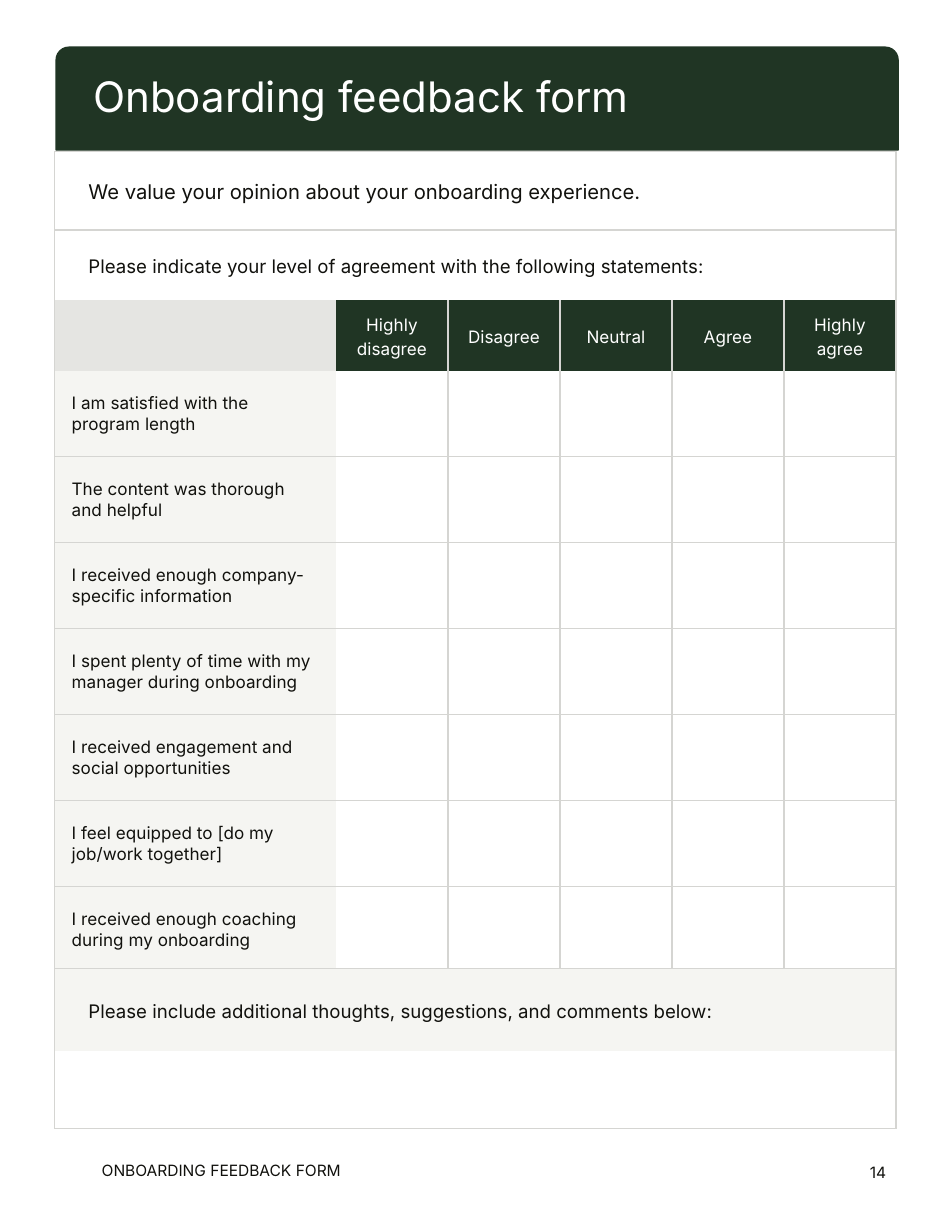
from lxml.etree import SubElement as Sub
from pptx import Presentation
from pptx.dml.color import RGBColor as Color
from pptx.enum.shapes import MSO_SHAPE as Kind
from pptx.enum.text import MSO_ANCHOR as Anchor, PP_ALIGN as Align
from pptx.oxml.ns import qn
from pptx.util import Inches, Pt

GREEN, INK, WHITE = "203524", "11110D", "FFFFFF"
RULE, PALE, GREY = "D5D5D2", "F5F5F2", "E5E5E2"
LEFT, WIDTH = 0.49, 7.51

TITLE = "Onboarding feedback form"
INTRO = "We value your opinion about your onboarding experience."
PROMPT = "Please indicate your level of agreement with the following statements:"
SCALE = ["Highly disagree", "Disagree", "Neutral", "Agree", "Highly agree"]
ITEMS = [
    "I am satisfied with the program length",
    "The content was thorough\nand helpful",
    "I received enough company-specific information",
    "I spent plenty of time with my manager during onboarding",
    "I received engagement and social opportunities",
    "I feel equipped to [do my job/work together]",
    "I received enough coaching during my onboarding",
]
NOTE = "Please include additional thoughts, suggestions, and comments below:"
FOOTER, PAGE = "ONBOARDING FEEDBACK FORM", "14"


def paint(fill, color):
    fill.solid()
    fill.fore_color.rgb = Color.from_string(color)


def write(frame, text, size=11, color=INK, align=Align.LEFT, space=None):
    frame.word_wrap = True
    frame.text = text
    for para in frame.paragraphs:
        para.alignment = align
        if space:
            para.line_spacing = space
        para.font.size = Pt(size)
        para.font.name = "Inter"
        para.font.color.rgb = Color.from_string(color)


def inset(part, left, top, right, bottom):
    part.margin_left, part.margin_top = Inches(left), Inches(top)
    part.margin_right, part.margin_bottom = Inches(right), Inches(bottom)


def add_box(shapes, kind, place, line, fill=None):
    box = shapes.add_shape(kind, *map(Inches, place))
    box.shadow.inherit = False
    box.line.width = Pt(0.75)
    paint(box.line.fill, line)
    if fill:
        paint(box.fill, fill)
    else:
        box.fill.background()
    box.text_frame.vertical_anchor = Anchor.MIDDLE
    return box


def add_label(shapes, text, place, anchor, align):
    frame = shapes.add_textbox(*map(Inches, place)).text_frame
    inset(frame, 0.1, 0.1, 0.1, 0.1)
    frame.vertical_anchor = anchor
    write(frame, text, size=10, align=align)


def add_grid(shapes, top, cols, rows):
    place = LEFT, top, sum(cols), sum(rows)
    grid = shapes.add_table(len(rows), len(cols), *map(Inches, place)).table
    grid.first_row = grid.horz_banding = False
    for col, width in zip(grid.columns, cols):
        col.width = Inches(width)
    for row, height in zip(grid.rows, rows):
        row.height = Inches(height)
    return grid


def style(cell, sides, fill=None):
    props = cell._tc.get_or_add_tcPr()
    for side in "LRTB":
        line = Sub(props, qn("a:ln" + side), w=str(Pt(0.75)))
        if side in sides:
            Sub(Sub(line, qn("a:solidFill")), qn("a:srgbClr"), val=RULE)
        else:
            Sub(line, qn("a:noFill"))
    if fill:
        paint(cell.fill, fill)
    else:
        cell.fill.background()
    cell.vertical_anchor = Anchor.MIDDLE


def add_survey(shapes):
    cols = [2.51] + [1] * len(SCALE)
    grid = add_grid(shapes, 2.05, cols, [0.63, 0.63] + [0.76] * len(ITEMS))
    lead = grid.cell(0, 0)
    lead.merge(grid.cell(0, len(SCALE)))
    for col in range(len(cols)):
        style(grid.cell(0, col), "LTR" if col == 0 else "TR" if col == len(SCALE) else "T")
    inset(lead, 0.3, 0.2, 0, 0.2)
    write(lead.text_frame, PROMPT, size=12, space=1.15)
    style(grid.cell(1, 0), "L", GREY)
    for col, text in enumerate(SCALE, 1):
        cell = grid.cell(1, col)
        style(cell, "R" if col == 1 else "LR", GREEN)
        inset(cell, 0.1, 0.1, 0.1, 0.1)
        write(cell.text_frame, text, color=WHITE, align=Align.CENTER, space=1.15)
    for row, text in enumerate(ITEMS, 2):
        edge = "B" if row == 2 else "TB"
        cell = grid.cell(row, 0)
        style(cell, "L" + edge, PALE)
        inset(cell, 0.15, 0.2, 0.2, 0.2)
        write(cell.text_frame, text)
        for col in range(1, len(cols)):
            style(grid.cell(row, col), ("R" if col == 1 else "LR") + edge)


def add_notes(shapes):
    grid = add_grid(shapes, 8.65, [WIDTH], [0.73, 0.7])
    head = grid.cell(0, 0)
    style(head, "LTR", PALE)
    inset(head, 0.3, 0.2, 0.2, 0.2)
    write(head.text_frame, NOTE, size=12, space=1.15)
    style(grid.cell(1, 0), "LRB")


def main():
    deck = Presentation()
    deck.slide_width, deck.slide_height = Inches(8.5), Inches(11)
    shapes = deck.slides.add_slide(deck.slide_layouts[6]).shapes
    add_label(shapes, FOOTER, (0.81, 10.28, 3.28, 0.37), Anchor.TOP, Align.LEFT)
    add_label(shapes, PAGE, (7.6, 10.11, 0.41, 0.71), Anchor.MIDDLE, Align.RIGHT)
    intro = add_box(shapes, Kind.RECTANGLE, (LEFT, 1.35, WIDTH, 0.71), RULE)
    inset(intro.text_frame, 0.3, 0, 0, 0)
    write(intro.text_frame, INTRO, size=13)
    add_survey(shapes)
    add_notes(shapes)
    head = add_box(shapes, Kind.ROUND_2_SAME_RECTANGLE, (0.5, 0.42, 7.52, 0.92), GREEN, GREEN)
    head.adjustments[0] = 0.125
    inset(head.text_frame, 0.3, 0.1, 0.1, 0.1)
    write(head.text_frame, TITLE, size=27, color=WHITE, space=0.8)
    deck.save("out.pptx")


if __name__ == "__main__":
    main()
